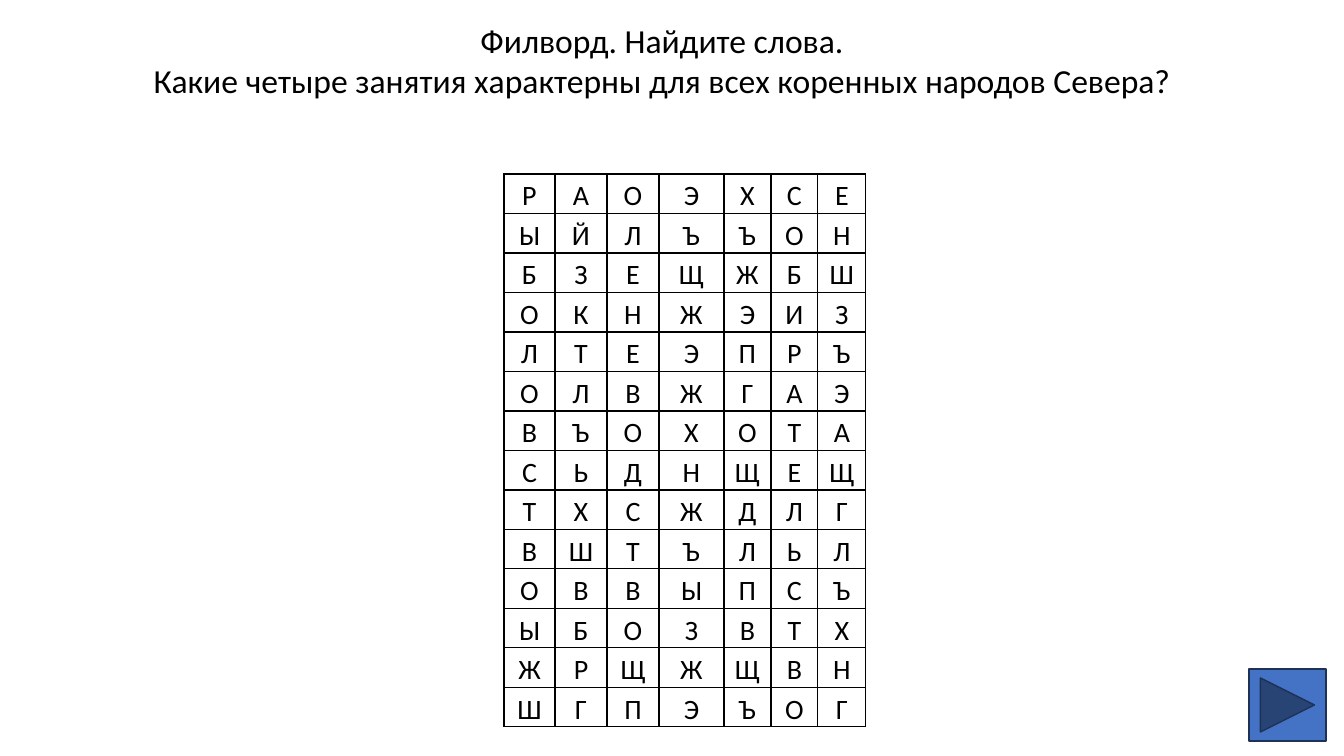
import pptx
import pptx.util
import pptx.dml.color
import pptx.enum.shapes
import pptx.enum.text
import pptx.oxml.ns
from lxml import etree

SCALE = 914400 / 100.8
BLACK = pptx.dml.color.RGBColor(0x00, 0x00, 0x00)
BLUE = pptx.dml.color.RGBColor(0x44, 0x72, 0xC4)
NAVY = pptx.dml.color.RGBColor(0x1E, 0x32, 0x56)
FONT = "Calibri"

TITLE = [
    "Филворд. Найдите слова.",
    "Какие четыре занятия характерны для всех коренных народов Севера?",
]
GRID = [
    "РАОЭХСЕ", "ЫЙЛЪЪОН", "БЗЕЩЖБШ", "ОКНЖЭИЗ", "ЛТЕЭПРЪ",
    "ОЛВЖГАЭ", "ВЪОХОТА", "СЬДНЩЕЩ", "ТХСЖДЛГ", "ВШТЪЛЬЛ",
    "ОВВЫПСЪ", "ЫБОЗВТХ", "ЖРЩЖЩВН", "ШГПЭЪОГ",
]
WIDTHS = [51, 52, 52, 65, 47, 47, 48]


def px(num):
    return pptx.util.Emu(round(num * SCALE))


def box(*nums):
    return [px(num) for num in nums]


def style(par, size):
    par.alignment = pptx.enum.text.PP_ALIGN.CENTER
    for run in par.runs:
        run.font.name = FONT
        run.font.size = pptx.util.Pt(size)
        run.font.color.rgb = BLACK


def add_text(slide, place, lines, size):
    frame = slide.shapes.add_textbox(*box(*place)).text_frame
    frame.word_wrap = True
    frame.auto_size = pptx.enum.text.MSO_AUTO_SIZE.SHAPE_TO_FIT_TEXT
    frame.text = "\n".join(lines)
    for par in frame.paragraphs:
        style(par, size)


def frame_cell(cell):
    props = cell._tc.get_or_add_tcPr()
    for side in ("lnL", "lnR", "lnT", "lnB"):
        line = etree.SubElement(props, pptx.oxml.ns.qn("a:" + side), w="12700")
        fill = etree.SubElement(line, pptx.oxml.ns.qn("a:solidFill"))
        etree.SubElement(fill, pptx.oxml.ns.qn("a:srgbClr"), val=str(BLACK))
    cell.fill.background()


def fill_cell(cell, letter):
    frame_cell(cell)
    cell.margin_left = cell.margin_right = px(7)
    cell.margin_top = cell.margin_bottom = 0
    cell.text = letter
    par = cell.text_frame.paragraphs[0]
    par.line_spacing = 1.15
    par.space_after = pptx.util.Pt(8)
    style(par, 20)


def add_grid(slide, left, top, high):
    place = box(left, top, sum(WIDTHS), high)
    table = slide.shapes.add_table(len(GRID), len(WIDTHS), *place).table
    table.first_row = False
    table.horz_banding = False
    for col, width in zip(table.columns, WIDTHS):
        col.width = px(width)
    for row, word in zip(table.rows, GRID):
        row.height = px(high / len(GRID))
        for cell, letter in zip(row.cells, word):
            fill_cell(cell, letter)


def add_button(slide, place):
    kind = pptx.enum.shapes.MSO_SHAPE.ACTION_BUTTON_FORWARD_OR_NEXT
    button = slide.shapes.add_shape(kind, *box(*place))
    button.shadow.inherit = False
    button.fill.solid()
    button.fill.fore_color.rgb = BLUE
    button.line.color.rgb = NAVY
    button.line.width = pptx.util.Pt(1)


def main():
    deck = pptx.Presentation()
    deck.slide_width, deck.slide_height = box(1344, 756)
    slide = deck.slides.add_slide(deck.slide_layouts[6])

    # Letter grid
    add_grid(slide, 504, 174, 553)
    # Task heading
    add_text(slide, (66, 15, 1192, 92), TITLE, 24)
    # Next button
    add_button(slide, (1249, 669, 77, 72))

    deck.save("out.pptx")


if __name__ == "__main__":
    main()
